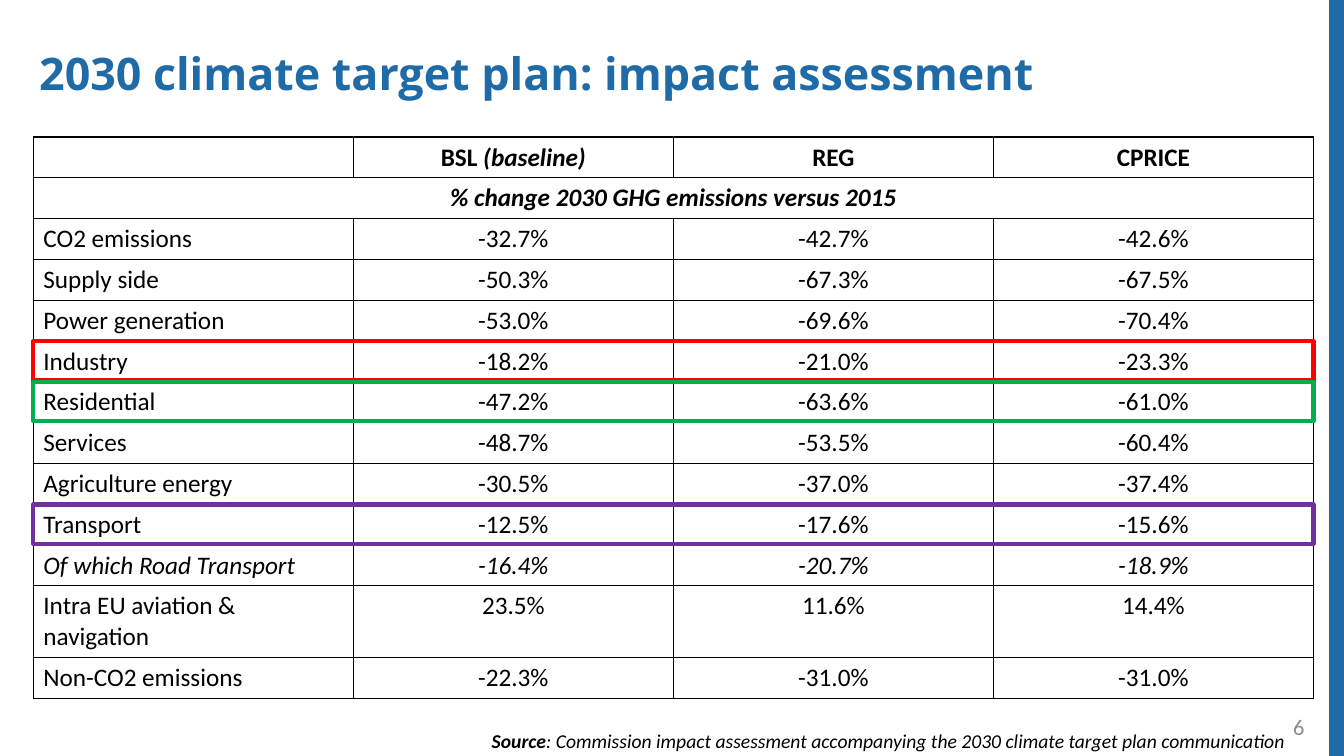
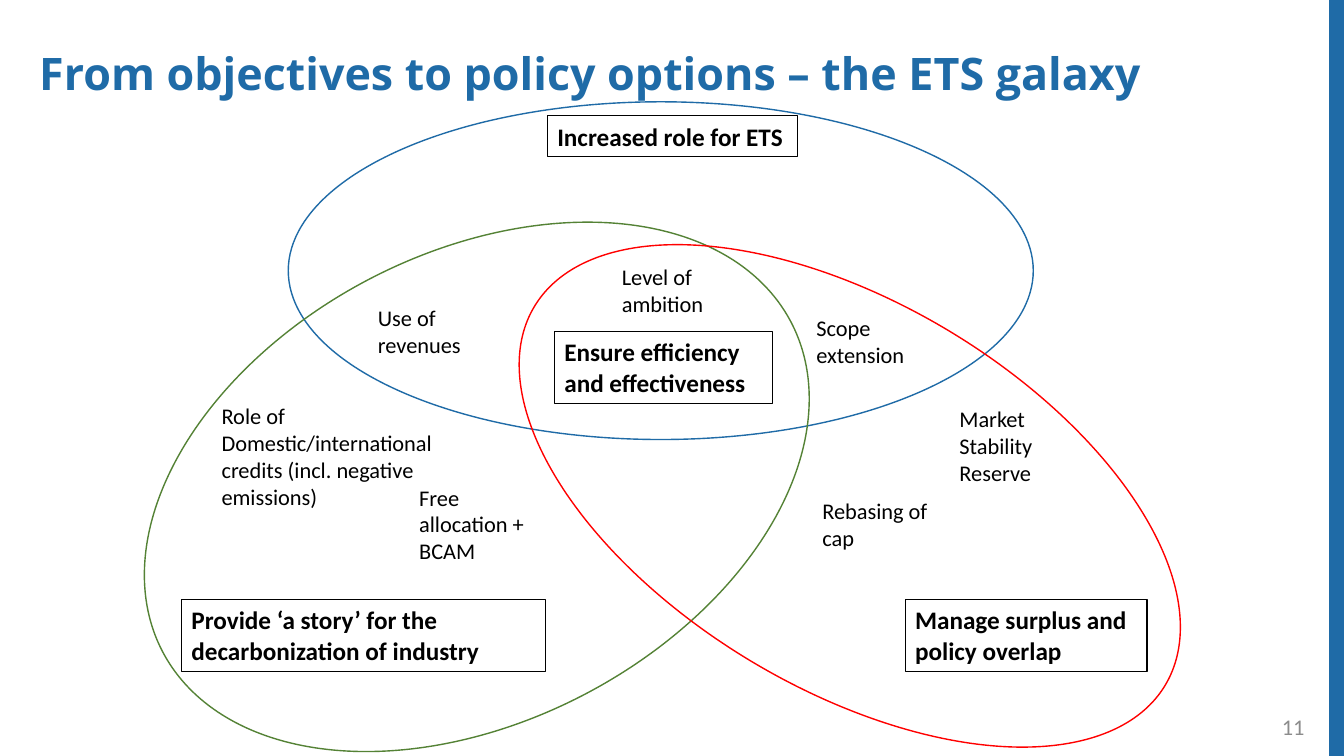
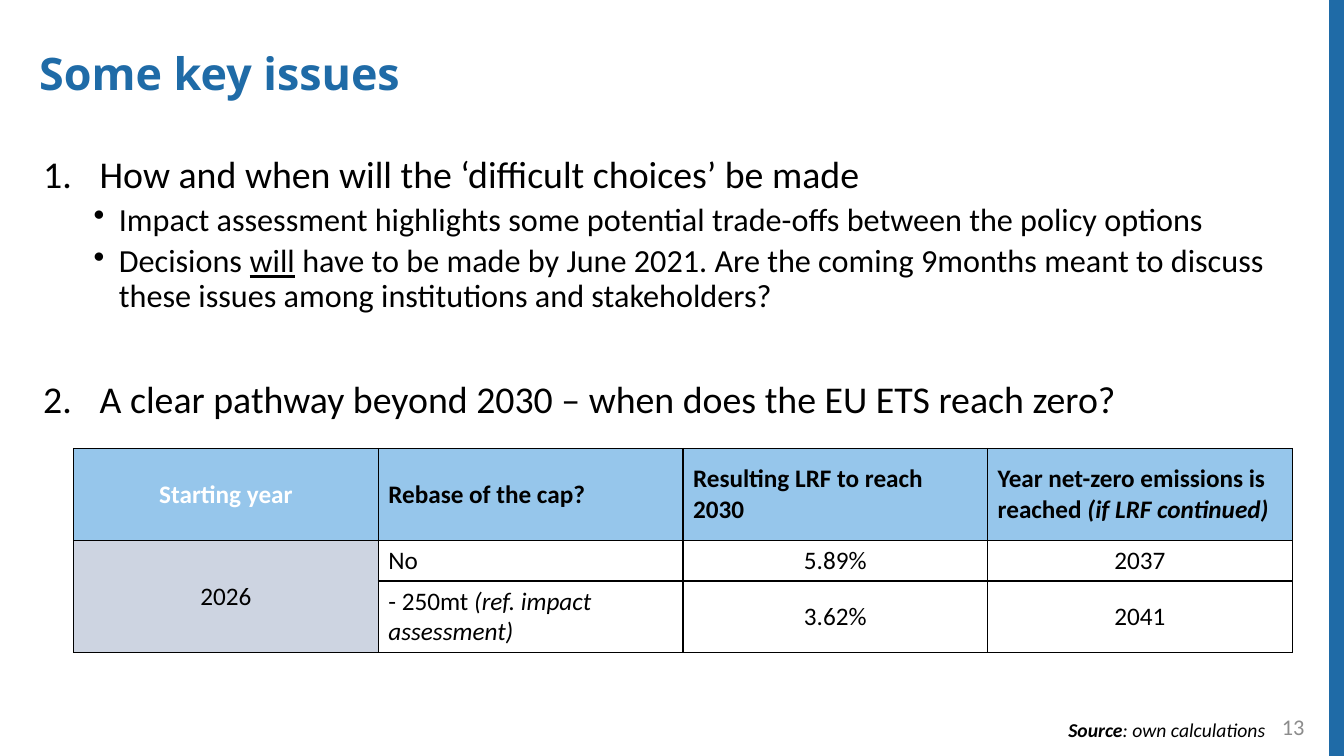
from pptx import Presentation
from pptx.dml.color import RGBColor
from pptx.enum.shapes import MSO_CONNECTOR, MSO_SHAPE
from pptx.enum.text import MSO_ANCHOR, PP_ALIGN
from pptx.oxml.ns import qn
from pptx.util import Inches, Pt
from lxml.etree import SubElement, Element


class Theme:
    blue, sky, mist, white = "1F6BA7", "96C6EB", "CDD4E1", "FFFFFF"
    black, grey = "000000", "8C8C8C"
    red, green, purple, olive = "FF0000", "00B050", "7030A0", "548235"
    title = dict(name="Open Sans", size=Pt(32), bold=True, color=blue)
    point = dict(name="Calibri", size=Pt(27), bold=False, color=black)
    subpoint = {**point, "size": Pt(23)}
    cell = {**point, "size": Pt(18)}
    head = {**cell, "bold": True}
    label = {**point, "size": Pt(16)}
    number = {**label, "color": grey}
    source = {**point, "size": Pt(14), "italic": True}


prs = Presentation()
prs.slide_width, prs.slide_height = Inches(13.33), Inches(7.5)
col, row = prs.slide_width / 100, prs.slide_height / 100
ALIGN = {"l": PP_ALIGN.LEFT, "c": PP_ALIGN.CENTER, "r": PP_ALIGN.RIGHT}
ITALIC = dict(italic=True)


def area(x, y, w, h):
    return round(x * col), round(y * row), round(w * col), round(h * row)


def write(p, text, look, **layout):
    for key, value in layout.items():
        setattr(p, key, value)
    for words, extra in [(text, {})] if isinstance(text, str) else text:
        r = p.add_run()
        r.text = words
        for key, value in {**look, **extra}.items():
            if key == "color":
                r.font.color.rgb = RGBColor.from_string(value)
            else:
                setattr(r.font, key, value)


slides = []
for title, number in [
    ("2030 climate target plan: impact assessment", "6"),
    ("From objectives to policy options – the ETS galaxy", "11"),
    ("Some key issues", "13"),
]:
    s = prs.slides.add_slide(prs.slide_layouts[6])
    slides.append(s)
    band = s.shapes.add_connector(MSO_CONNECTOR.STRAIGHT, round(99.53 * col), 0, round(99.53 * col), prs.slide_height)
    band.line.color.rgb = RGBColor.from_string(Theme.blue)
    band.line.width = Pt(12)
    SubElement(band._element.spPr, qn("a:effectLst"))
    tf = s.shapes.add_textbox(*area(2.18, 6.13, 89.7, 7.73)).text_frame
    tf.word_wrap = True
    write(tf.paragraphs[0], title, Theme.title, line_spacing=0.9)
    tf = s.shapes.add_textbox(*area(75.3, 93.47, 22.5, 5.33)).text_frame
    tf.word_wrap = True
    tf.vertical_anchor = MSO_ANCHOR.MIDDLE
    write(tf.paragraphs[0], number, Theme.number, alignment=PP_ALIGN.RIGHT)
impact, galaxy, issues = slides

left, top, width, line_height = 2.48, 18.13, 95.25, 5.4
emissions = [
    ("CO2 emissions", "-32.7%", "-42.7%", "-42.6%"),
    ("Supply side", "-50.3%", "-67.3%", "-67.5%"),
    ("Power generation", "-53.0%", "-69.6%", "-70.4%"),
    ("Industry", "-18.2%", "-21.0%", "-23.3%"),
    ("Residential", "-47.2%", "-63.6%", "-61.0%"),
    ("Services", "-48.7%", "-53.5%", "-60.4%"),
    ("Agriculture energy", "-30.5%", "-37.0%", "-37.4%"),
    ("Transport", "-12.5%", "-17.6%", "-15.6%"),
    ("Of which Road Transport", "-16.4%", "-20.7%", "-18.9%"),
    ("Intra EU aviation & navigation", "23.5%", "11.6%", "14.4%"),
    ("Non-CO2 emissions", "-22.3%", "-31.0%", "-31.0%"),
]
clear = [None] * 4
impact_rows = [
    ("cccc", clear, Theme.head, (None, [("BSL ", {}), ("(baseline)", ITALIC)], "REG", "CPRICE")),
    ("cccc", clear, {**Theme.head, **ITALIC}, ("% change 2030 GHG emissions versus 2015", None, None, None)),
]
for values in emissions:
    look = {**Theme.cell, "italic": values[0].startswith("Of which")}
    impact_rows.append(("lccc", clear, look, values))
body_fills = [Theme.mist] + [Theme.white] * 3
issue_rows = [
    ("clll", [Theme.sky] * 4, Theme.head, (
        [("Starting year", dict(color=Theme.white))], "Rebase of the cap?", "Resulting LRF to reach 2030",
        [("Year net-zero emissions is reached ", {}), ("(if LRF continued)", ITALIC)])),
    ("clcc", body_fills, Theme.cell, ("2026", "No", "5.89%", "2037")),
    ("clcc", body_fills, Theme.cell, (
        None, [("- 250mt ", {}), ("(ref. impact assessment)", ITALIC)], "3.62%", "2041")),
]

for s, at, heights, rows, merged, anchor in [
    (impact, (left, top, width, 74.27), [line_height] * 11 + [9.47, line_height], impact_rows,
     ((1, 0), (1, 3)), MSO_ANCHOR.TOP),
    (issues, (5.48, 59.33, 90.68, 27), [12.13, line_height, 9.47], issue_rows,
     ((1, 0), (2, 0)), MSO_ANCHOR.MIDDLE),
]:
    table = s.shapes.add_table(len(rows), 4, *area(*at)).table
    table.first_row = table.horz_banding = False
    for i, (aligns, fills, look, texts) in enumerate(rows):
        table.rows[i].height = round(heights[i] * row)
        for j, text in enumerate(texts):
            cell = table.cell(i, j)
            cell.vertical_anchor = anchor
            if fills[j]:
                cell.fill.solid()
                cell.fill.fore_color.rgb = RGBColor.from_string(fills[j])
            else:
                cell.fill.background()
            for k, side in enumerate(("lnL", "lnR", "lnT", "lnB")):
                edge = Element(qn("a:" + side), w=str(Pt(1)))
                SubElement(SubElement(edge, qn("a:solidFill")), qn("a:srgbClr"), val=Theme.black)
                cell._tc.get_or_add_tcPr().insert(k, edge)
            if text:
                write(cell.text_frame.paragraphs[0], text, look, alignment=ALIGN[aligns[j]])
    table.cell(*merged[0]).merge(table.cell(*merged[1]))

outlines = [
    (impact, MSO_SHAPE.RECTANGLE, (left, top + line_height * i, width, 5.2), 0, color, 3)
    for i, color in [(5, Theme.red), (6, Theme.green), (9, Theme.purple)]
] + [
    (galaxy, MSO_SHAPE.OVAL, (21.45, 13.47, 55.43, 44.67), 0, Theme.blue, 1),
    (galaxy, MSO_SHAPE.OVAL, (9.08, 33.47, 52.8, 61.87), 332.3, Theme.olive, 1),
    (galaxy, MSO_SHAPE.OVAL, (35.85, 40.13, 54.75, 50.93), 31, Theme.red, 1),
]
source = ("Source", dict(bold=True))
one, two, three, four = 5.33, 8.53, 12.13, 15.73
for s, at, text, look, framed in [
    (impact, (35.85, 95.73, 64.13, 4.53),
     [source, (": Commission impact assessment accompanying the 2030 climate target plan communication", {})],
     Theme.source, False),
    (issues, (78.75, 94.27, 17.4, 4.53), [source, (": own calculations", {})], Theme.source, False),
    (galaxy, (41.25, 43.87, 16.2, 9.47), "Ensure efficiency and effectiveness", Theme.head, True),
    (galaxy, (40.73, 15.33, 18.6, one), "Increased role for ETS", Theme.head, True),
    (galaxy, (13.5, 79.33, 27.08, 9.47), "Provide ‘a story’ for the decarbonization of industry", Theme.head, True),
    (galaxy, (67.35, 79.33, 18, 9.47), "Manage surplus and policy overlap", Theme.head, True),
    (galaxy, (60, 40.93, 11.25, two), "Scope extension", Theme.label, False),
    (galaxy, (30.45, 63.33, 11.25, three), "Free allocation + BCAM", Theme.label, False),
    (galaxy, (27.38, 39.6, 11.25, two), "Use of revenues", Theme.label, False),
    (galaxy, (45.53, 34.13, 11.25, two), "Level of ambition", Theme.label, False),
    (galaxy, (60.45, 65.07, 10.2, two), "Rebasing of cap", Theme.label, False),
    (galaxy, (70.65, 52.93, 9.23, three), "Market Stability Reserve", Theme.label, False),
    (galaxy, (15.75, 52.53, 21, four), "Role of Domestic/international credits (incl. negative emissions)",
     Theme.label, False),
]:
    sp = s.shapes.add_textbox(*area(*at))
    sp.text_frame.word_wrap = True
    write(sp.text_frame.paragraphs[0], text, look)
    if framed:
        sp.line.color.rgb = RGBColor.from_string(Theme.black)
        sp.line.width = Pt(0.75)

for s, kind, at, turn, color, weight in outlines:
    sp = s.shapes.add_shape(kind, *area(*at))
    sp.shadow.inherit = False
    sp.fill.background()
    sp.line.color.rgb = RGBColor.from_string(color)
    sp.line.width = Pt(weight)
    sp.rotation = turn

tf = issues.shapes.add_textbox(*area(left, top, width, 40)).text_frame
tf.word_wrap = True
for i, (start, gap, text) in enumerate([
    (1, 0, "How and when will the ‘difficult choices’ be made"),
    (None, 5, "Impact assessment highlights some potential trade-offs between the policy options"),
    (None, 5, [
        ("Decisions ", {}), ("will", dict(underline=True)),
        (" have to be made by June 2021. Are the coming 9months meant to discuss these issues"
         " among institutions and stakeholders?", {})]),
    (2, 37, "A clear pathway beyond 2030 – when does the EU ETS reach zero?"),
]):
    p = tf.add_paragraph() if i else tf.paragraphs[0]
    pPr = p._p.get_or_add_pPr()
    margin, hang = (0.56, 0.56) if start else (0.75, 0.25)
    pPr.set("marL", str(Inches(margin)))
    pPr.set("indent", str(-Inches(hang)))
    if start:
        SubElement(pPr, qn("a:buAutoNum"), type="arabicPeriod", startAt=str(start))
        write(p, text, Theme.point, line_spacing=1.2, space_before=Pt(gap))
    else:
        SubElement(pPr, qn("a:buChar"), char="•")
        write(p, text, Theme.subpoint, level=1, line_spacing=0.9, space_before=Pt(gap))

prs.save("out.pptx")
